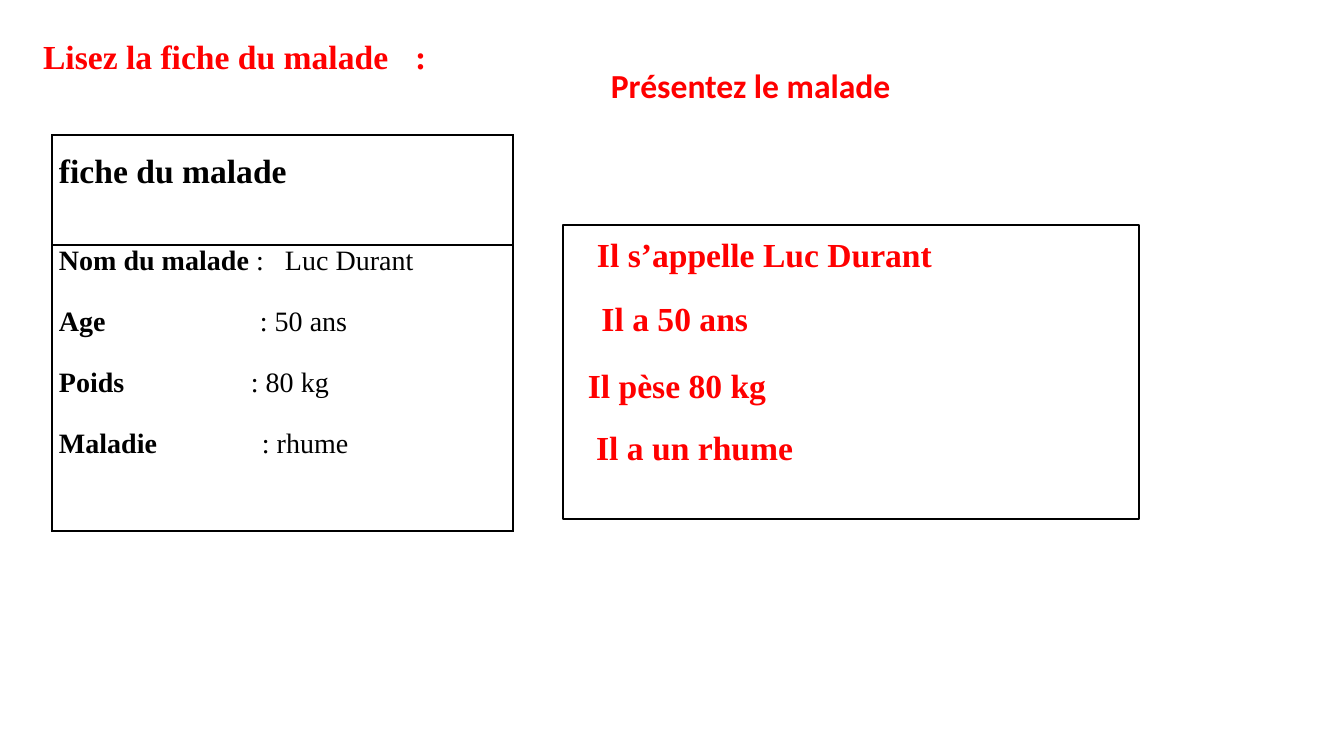
from dataclasses import dataclass

from lxml.etree import SubElement
from pptx import Presentation
from pptx.dml.color import RGBColor
from pptx.enum.shapes import MSO_SHAPE
from pptx.enum.text import MSO_ANCHOR, MSO_AUTO_SIZE, PP_ALIGN
from pptx.oxml.ns import qn
from pptx.util import Emu, Pt

EMU_PER_PX = 914400 / 100.8


@dataclass(frozen=True)
class Theme:
    accent: RGBColor = RGBColor(0xFF, 0x00, 0x00)
    ink: RGBColor = RGBColor(0x00, 0x00, 0x00)
    serif: str = "Times New Roman"
    sans: str = "Calibri"
    large: int = 24
    body: int = 20
    line: int = 1


THEME = Theme()

PATIENT = [
    ("Nom du malade", "\u00a0:\tLuc Durant", 226),
    ("Age", "\t: 50 ans", 201),
    ("Poids", "\t: 80 kg", 192),
    ("Maladie", "\t: rhume", 203),
]
# Sentence, then left, top and width inside the answer box
ANSWERS = [
    ("Il s’appelle Luc Durant", 12, 4, 367),
    ("Il a 50 ans", -47, 68, 242),
    ("Il pèse 80 kg", 12, 135, 201),
    ("Il a un rhume", 12, 197, 228),
]


def px(length):
    return Emu(round(length * EMU_PER_PX))


def add_run(paragraph, text, size, color, bold=True, name=THEME.serif):
    run = paragraph.add_run()
    run.text = text
    run.font.size = Pt(size)
    run.font.bold = bold
    run.font.name = name
    run.font.color.rgb = color


def add_tab_stop(paragraph, position):
    tabs = SubElement(paragraph._p.get_or_add_pPr(), qn("a:tabLst"))
    SubElement(tabs, qn("a:tab"), pos=str(px(position)), algn="l")


def add_line(slide, text, box, align=PP_ALIGN.LEFT, name=THEME.serif):
    text_box = slide.shapes.add_textbox(*map(px, box))
    text_box.text_frame.word_wrap = True
    paragraph = text_box.text_frame.paragraphs[0]
    paragraph.alignment = align
    add_run(paragraph, text, THEME.large, THEME.accent, name=name)


def fill_title(slide, box):
    title = slide.shapes.title
    title.left, title.top, title.width, title.height = map(px, box)
    frame = title.text_frame
    frame.vertical_anchor = MSO_ANCHOR.TOP
    frame.auto_size = MSO_AUTO_SIZE.NONE
    paragraph = frame.paragraphs[0]
    paragraph.alignment = PP_ALIGN.LEFT
    add_tab_stop(paragraph, 372)
    add_run(paragraph, "Lisez la fiche du malade\t:", THEME.large, THEME.accent)


def format_cell(cell):
    cell.margin_left = cell.margin_right = px(7)
    cell.margin_top = cell.margin_bottom = 0
    properties = cell._tc.get_or_add_tcPr()
    for side in ("lnL", "lnR", "lnT", "lnB"):
        border = SubElement(properties, qn(f"a:{side}"), w=str(Pt(THEME.line)))
        fill = SubElement(border, qn("a:solidFill"))
        SubElement(fill, qn("a:srgbClr"), val=str(THEME.ink))
    cell.fill.background()


def add_patient_card(slide, box, header_height):
    left, top, width, height = box
    table = slide.shapes.add_table(2, 1, *map(px, box)).table
    table.first_row = table.horz_banding = False
    table.columns[0].width = px(width)
    table.rows[0].height = px(header_height)
    table.rows[1].height = px(height - header_height)
    header, details = table.cell(0, 0), table.cell(1, 0)
    for cell in (header, details):
        format_cell(cell)

    heading = header.text_frame.paragraphs[0]
    heading.line_spacing = 1.5
    add_run(heading, "fiche du malade", THEME.large, THEME.ink)

    frame = details.text_frame
    for index, (label, value, tab) in enumerate(PATIENT):
        paragraph = frame.add_paragraph() if index else frame.paragraphs[0]
        if index:
            paragraph.space_before = px(30)
        add_tab_stop(paragraph, tab)
        add_run(paragraph, label, THEME.body, THEME.ink)
        add_run(paragraph, value, THEME.body, THEME.ink, bold=False)


def add_answer_box(slide, box):
    left, top, width, height = box
    frame = slide.shapes.add_shape(MSO_SHAPE.RECTANGLE, *map(px, box))
    frame.shadow.inherit = False
    frame.fill.background()
    frame.line.color.rgb = THEME.ink
    frame.line.width = Pt(THEME.line)
    for sentence, x, y, line_width in ANSWERS:
        add_line(slide, sentence, (left + x, top + y, line_width, 50), PP_ALIGN.RIGHT)


def main():
    presentation = Presentation()
    presentation.slide_width, presentation.slide_height = px(1344), px(756)
    slide = presentation.slides.add_slide(presentation.slide_layouts[5])
    fill_title(slide, (33, 31, 854, 50))
    add_patient_card(slide, (52, 135, 461, 396), header_height=110)
    add_line(slide, "Présentez le malade", (601, 60, 706, 50), name=THEME.sans)
    add_answer_box(slide, (563, 225, 576, 294))
    presentation.save("out.pptx")


if __name__ == "__main__":
    main()
